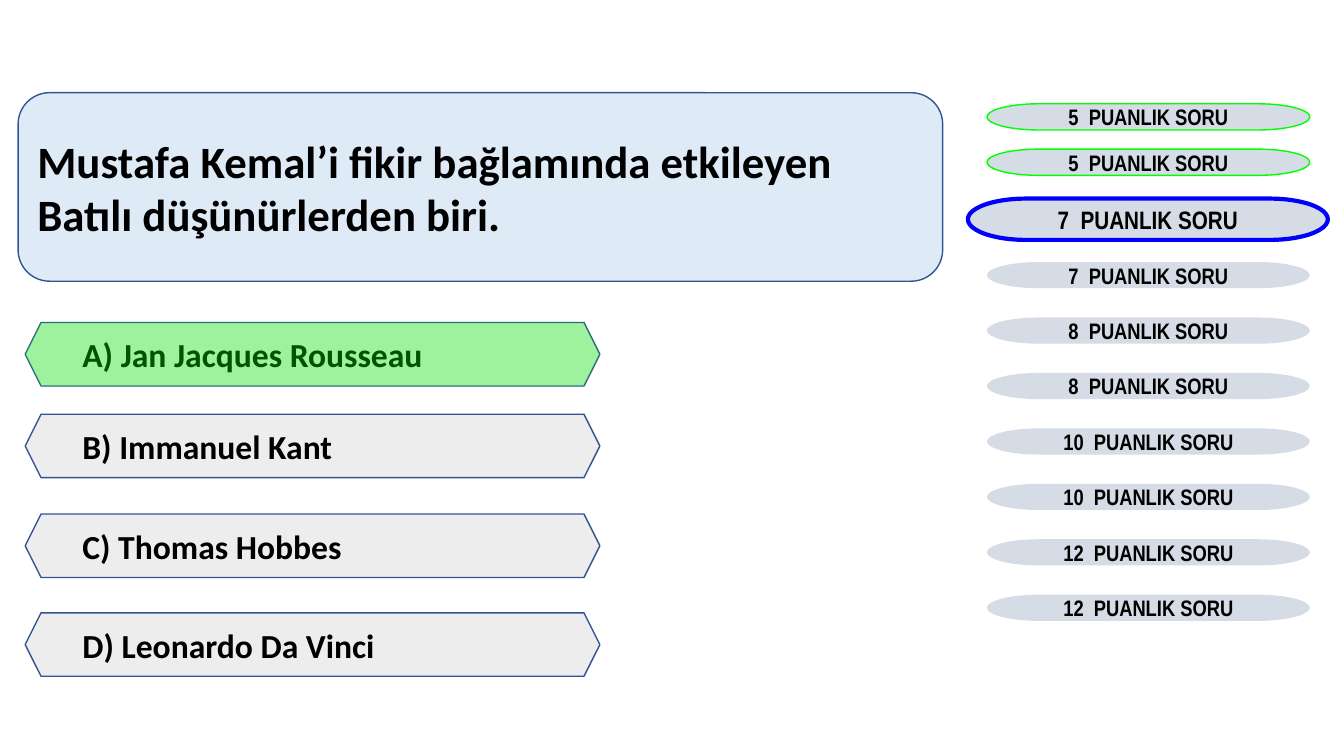
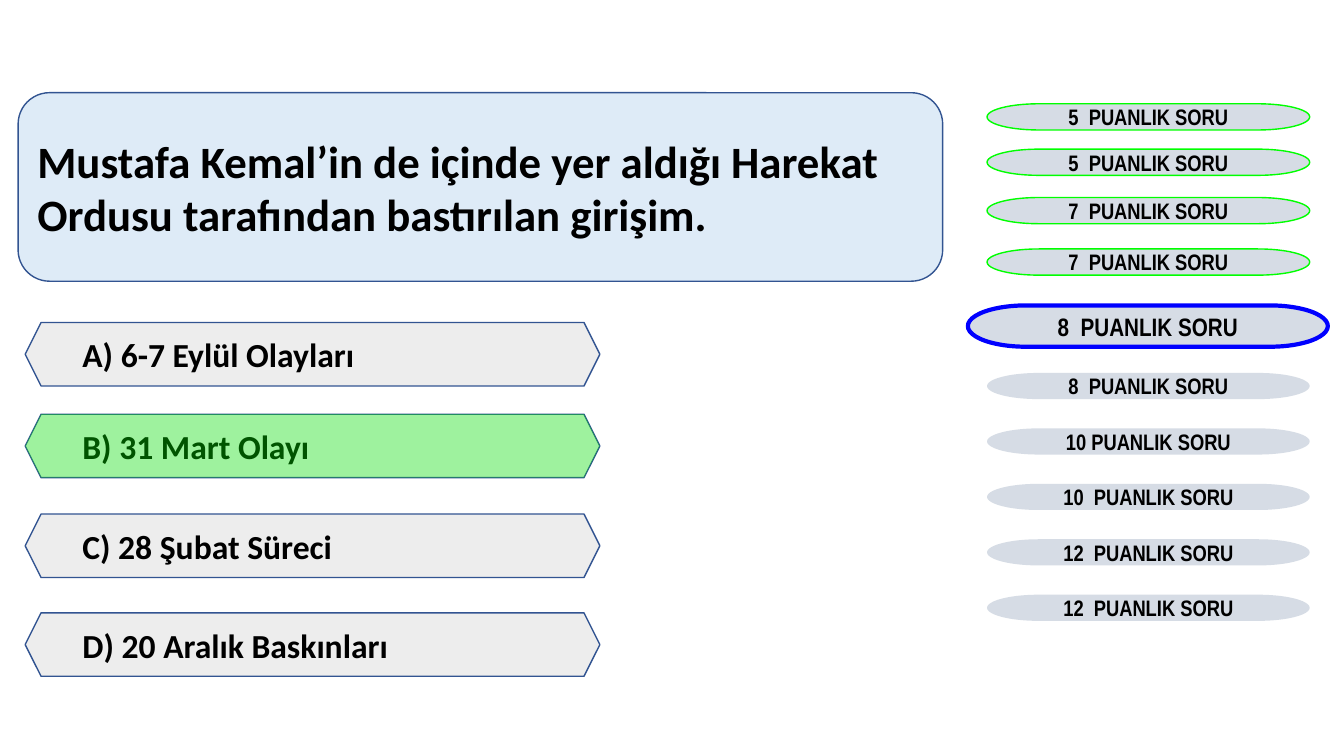
from lxml import etree
from pptx import Presentation
from pptx import util as u
from pptx.dml.color import RGBColor
from pptx.enum import shapes as kinds, text as txt
from pptx.oxml.ns import qn

COLORS = {
    "text": "000000",
    "outline": "325491",
    "question": "DEEBF7",
    "option": "EDEDED",
    "score": "D6DCE5",
    "answered": "00FF00",
    "current": "0000FF",
}
OPTION_TOPS = [3.2, 4.11, 5.1, 6.08]
POINTS = [5, 5, 7, 7, 8, 8, 10, 10, 12, 12]
ANSWERED_TOPS = [1.03, 1.48, 1.96, 2.47]
FIRST_WAITING, WAITING_TOP, WAITING_STEP = 3, 2.6, 0.55

QUESTIONS = [
    dict(
        question="Mustafa Kemal’i fikir bağlamında etkileyen Batılı düşünürlerden biri.",
        options=["A) Jan Jacques Rousseau", "B) Immanuel Kant",
                 "C) Thomas Hobbes", "D) Leonardo Da Vinci"],
        correct=0, current=2, current_top=1.97,
        labels=[f"{points}  PUANLIK SORU" for points in POINTS],
    ),
    dict(
        question="Mustafa Kemal’in de içinde yer aldığı Harekat Ordusu "
                 "tarafından bastırılan girişim.",
        options=["A) 6-7 Eylül Olayları", "B) 31 Mart Olayı",
                 "C) 28 Şubat Süreci", "D) 20 Aralık Baskınları"],
        correct=1, current=4, current_top=3.03,
        labels=[f"{points} PUANLIK SORU" if row == 6 else f"{points}  PUANLIK SORU"
                for row, points in enumerate(POINTS)],
    ),
]


def color(name):
    return RGBColor.from_string(COLORS[name])


def write(shape, words, size, font="Calibri", align=txt.PP_ALIGN.LEFT, inset=None):
    frame = shape.text_frame
    frame.word_wrap = True
    frame.auto_size = txt.MSO_AUTO_SIZE.NONE
    frame.vertical_anchor = txt.MSO_ANCHOR.MIDDLE
    if inset is not None:
        frame.margin_left = frame.margin_right = u.Inches(inset)
        frame.margin_top = frame.margin_bottom = u.Inches(inset)
    paragraph = frame.paragraphs[0]
    paragraph.alignment = align
    run = paragraph.add_run()
    run.text = words
    run.font.name, run.font.size, run.font.bold = font, u.Pt(size), True
    run.font.color.rgb = color("text")


class Quiz:
    def __init__(self):
        self.deck = Presentation()
        self.deck.slide_width = u.Inches(13.33)
        self.deck.slide_height = u.Inches(7.5)
        self.slide = None

    def new_slide(self):
        self.slide = self.deck.slides.add_slide(self.deck.slide_layouts[5])

    def shape(self, kind, left, top, width, height, fill, line=None, line_width=1):
        added = self.slide.shapes.add_shape(
            kind, u.Inches(left), u.Inches(top), u.Inches(width), u.Inches(height))
        added.shadow.inherit = False
        added.fill.solid()
        added.fill.fore_color.rgb = color(fill)
        if line:
            added.line.color.rgb = color(line)
            added.line.width = u.Pt(line_width)
        else:
            added.line.fill.background()
        return added

    def question(self, words):
        """Put the slide title on a rounded panel."""
        panel = self.shape(kinds.MSO_SHAPE.ROUNDED_RECTANGLE,
                           0.18, 0.92, 9.17, 1.87, "question", "outline")
        title = self.slide.shapes.title
        title.left, title.top = u.Inches(0.27), u.Inches(0.92)
        title.width, title.height = u.Inches(8.99), u.Inches(1.87)
        write(title, words, 32)
        panel.element.addnext(title.element)

    def hexagon(self, top, fill, line=None):
        return self.shape(kinds.MSO_SHAPE.HEXAGON, 0.25, top, 5.7, 0.63, fill, line)

    def option(self, top, words):
        write(self.hexagon(top, "option", "outline"), words, 24, inset=0.04)

    def highlight(self, top):
        """Tint the correct option with a translucent layer."""
        tint = self.hexagon(top, "answered")
        rgb = tint.element.spPr.find(qn("a:solidFill")).find(qn("a:srgbClr"))
        etree.SubElement(rgb, qn("a:alpha"), val="33000")

    def score(self, row, label, current, current_top):
        size = 16
        if row == current:
            place, size = (9.6, current_top, 3.57, 0.41), 18
            outline = ("current", 3)
        elif row < current:
            place, outline = (9.79, ANSWERED_TOPS[row], 3.2, 0.26), ("answered", 1)
        else:
            top = WAITING_TOP + (row - FIRST_WAITING) * WAITING_STEP
            place, outline = (9.79, top, 3.2, 0.26), ()
        pill = self.shape(kinds.MSO_SHAPE.FLOWCHART_TERMINATOR, *place, "score", *outline)
        write(pill, label, size, font="Arial Narrow", align=txt.PP_ALIGN.CENTER)

    def add_question(self, question, options, correct, current, current_top, labels):
        self.new_slide()
        self.question(question)
        for top, words in zip(OPTION_TOPS, options):
            self.option(top, words)
        self.highlight(OPTION_TOPS[correct])
        for row, label in enumerate(labels):
            self.score(row, label, current, current_top)


def main():
    quiz = Quiz()
    for content in QUESTIONS:
        quiz.add_question(**content)
    quiz.deck.save("out.pptx")


if __name__ == "__main__":
    main()
